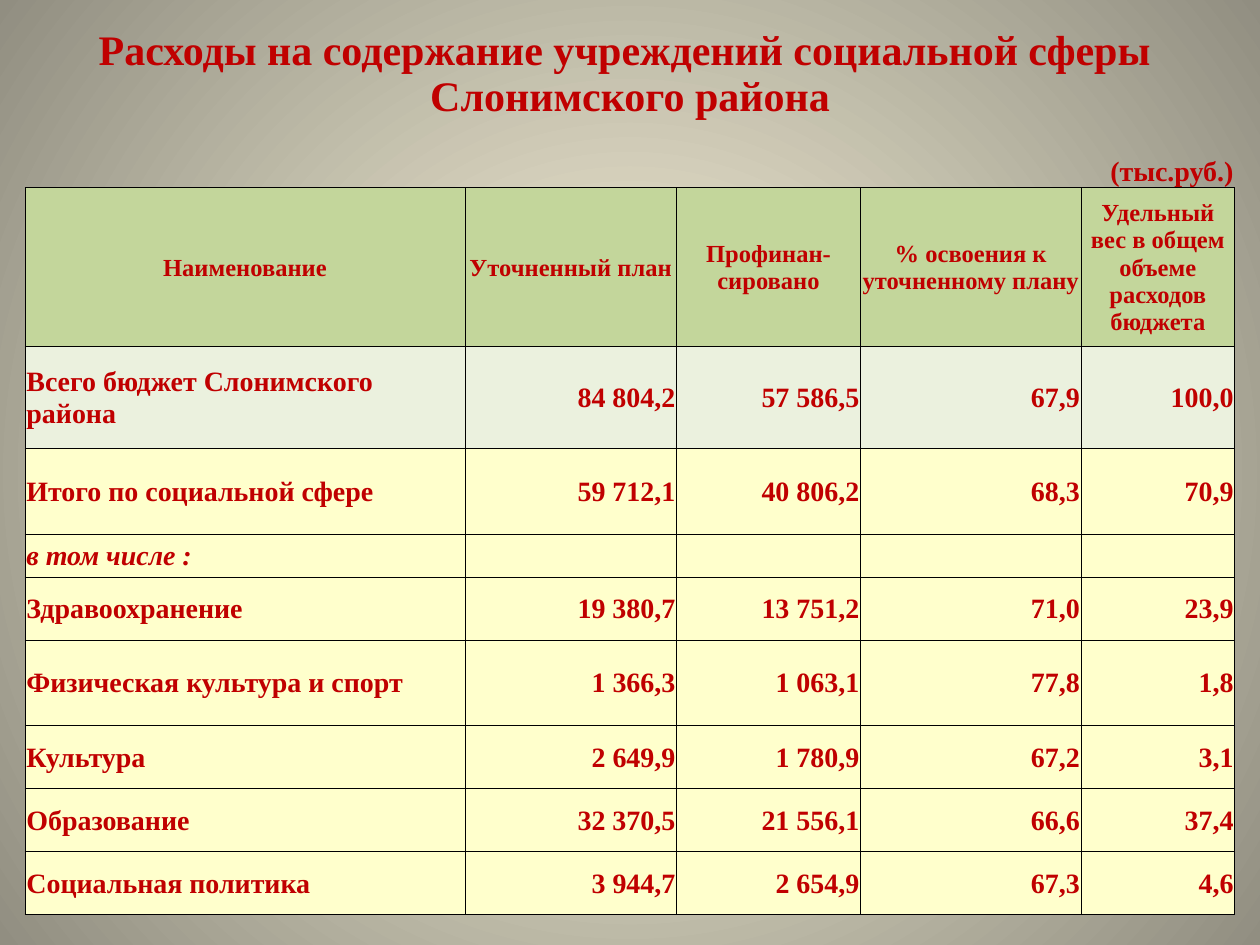
"""Build the slide with the social spending table of the district."""
from dataclasses import dataclass, field

from lxml.etree import SubElement
from pptx import Presentation
from pptx.dml.color import RGBColor
from pptx.enum.text import MSO_ANCHOR as Anchor, PP_ALIGN as Align
from pptx.oxml import parse_xml
from pptx.oxml.ns import nsdecls, qn
from pptx.util import Inches, Pt

COLORS = {
    "text": "C00000", "header": "C3D69B", "total": "EBF1DE", "body": "FFFFCC",
    "border": "000000", "glow": "FCF7DD", "edge": "918E81",
}
FONT = {"name": "Times New Roman", "bold": True}
MARGINS = {"margin_left": 0.01, "margin_right": 0.01, "margin_top": 0.01, "margin_bottom": 0}
COLUMN_WIDTHS = [3.49, 1.68, 1.46, 1.75, 1.22]
ALL_SIDES = ("L", "R", "T", "B")
NO_STYLE = "{2D5ABB26-0587-4C30-8999-92F81FD0307C}"


@dataclass
class BudgetRow:
    """One table row with its texts and look."""
    height: float
    texts: list[str]
    fill: str | None = "body"
    size: int = 16
    aligns: list = field(default_factory=lambda: [Align.LEFT] + [Align.RIGHT] * 4)
    anchor: Anchor = Anchor.MIDDLE
    sides: tuple = ALL_SIDES
    italic: bool = False


ROWS = [
    BudgetRow(0.83, ["Расходы на содержание учреждений социальной сферы \vСлонимского района"] + [""] * 4,
              fill=None, size=24, aligns=[Align.CENTER] * 5, anchor=Anchor.TOP, sides=()),
    BudgetRow(0.45, [""] * 4 + ["(тыс.руб.)"], fill=None, anchor=Anchor.BOTTOM, sides=("B",)),
    BudgetRow(1.26, ["Наименование", "Уточненный план", "Профинан-сировано",
                     "% освоения к уточненному плану",
                     "Удельный вес в общем объеме расходов бюджета"],
              fill="header", size=14, aligns=[Align.CENTER] * 5),
    BudgetRow(0.81, ["Всего бюджет Слонимского района", "84 804,2", "57 586,5", "67,9", "100,0"],
              fill="total"),
    BudgetRow(0.68, ["Итого по социальной сфере", "59 712,1", "40 806,2", "68,3", "70,9"]),
    BudgetRow(0.34, ["в том числе :"] + [""] * 4, italic=True),
    BudgetRow(0.5, ["Здравоохранение", "19 380,7", "13 751,2", "71,0", "23,9"]),
    BudgetRow(0.68, ["Физическая культура и спорт", "1 366,3", "1 063,1", "77,8", "1,8"]),
    BudgetRow(0.5, ["Культура", "2 649,9", "1 780,9", "67,2", "3,1"]),
    BudgetRow(0.5, ["Образование", "32 370,5", "21 556,1", "66,6", "37,4"]),
    BudgetRow(0.5, ["Социальная политика", "3 944,7", "2 654,9", "67,3", "4,6"]),
]


def rgb(role: str) -> RGBColor:
    """Return the colour of a role."""
    return RGBColor.from_string(COLORS[role])


def paint_background(slide) -> None:
    """Fill the slide with a gradient that spreads from its centre."""
    fill = slide.background.fill
    fill.gradient()
    for stop, role in zip(fill.gradient_stops, ("glow", "edge")):
        stop.color.rgb = rgb(role)
    gradient = slide.element.find(f".//{qn('a:gradFill')}")
    linear = gradient.find(qn("a:lin"))
    circle = parse_xml(
        f'<a:path {nsdecls("a")} path="circle">'
        '<a:fillToRect l="50000" t="50000" r="50000" b="50000"/></a:path>')
    gradient.replace(linear, circle)


def draw_borders(cell, sides: tuple) -> None:
    """Give a cell thin lines on the named sides."""
    properties = cell._tc.get_or_add_tcPr()
    for position, side in enumerate(sides):
        line = parse_xml(f'<a:ln{side} {nsdecls("a")} w="{Pt(0.5)}"/>')
        solid = SubElement(line, qn("a:solidFill"))
        SubElement(solid, qn("a:srgbClr"), val=COLORS["border"])
        properties.insert(position, line)


def fill_cell(cell, text: str, align: Align, row: BudgetRow) -> None:
    """Write and format one cell of a row."""
    for name, inches in MARGINS.items():
        setattr(cell, name, Inches(inches))
    cell.vertical_anchor = row.anchor
    if row.fill:
        cell.fill.solid()
        cell.fill.fore_color.rgb = rgb(row.fill)
    else:
        cell.fill.background()
    draw_borders(cell, row.sides)
    if not text:
        return
    cell.text = text
    paragraph = cell.text_frame.paragraphs[0]
    paragraph.alignment = align
    for run in paragraph.runs:
        for name, value in {**FONT, "size": Pt(row.size), "italic": row.italic}.items():
            setattr(run.font, name, value)
        run.font.color.rgb = rgb("text")


def add_budget_table(slide) -> None:
    """Add the table with its title row."""
    height = sum(row.height for row in ROWS)
    frame = slide.shapes.add_table(
        len(ROWS), len(COLUMN_WIDTHS), Inches(0.2), Inches(0.21),
        Inches(sum(COLUMN_WIDTHS)), Inches(height))
    table = frame.table
    table.first_row = table.horz_banding = False
    table._tbl.find(f".//{qn('a:tableStyleId')}").text = NO_STYLE
    for column, width in zip(table.columns, COLUMN_WIDTHS):
        column.width = Inches(width)
    for table_row, row in zip(table.rows, ROWS):
        table_row.height = Inches(row.height)
        for cell, text, align in zip(table_row.cells, row.texts, row.aligns):
            fill_cell(cell, text, align, row)
    table.cell(0, 0).merge(table.cell(0, len(COLUMN_WIDTHS) - 1))


def main() -> None:
    """Build and save the presentation."""
    presentation = Presentation()
    presentation.slide_width, presentation.slide_height = Inches(10), Inches(7.5)
    slide = presentation.slides.add_slide(presentation.slide_layouts[6])
    paint_background(slide)
    add_budget_table(slide)
    presentation.save("out.pptx")


if __name__ == "__main__":
    main()
